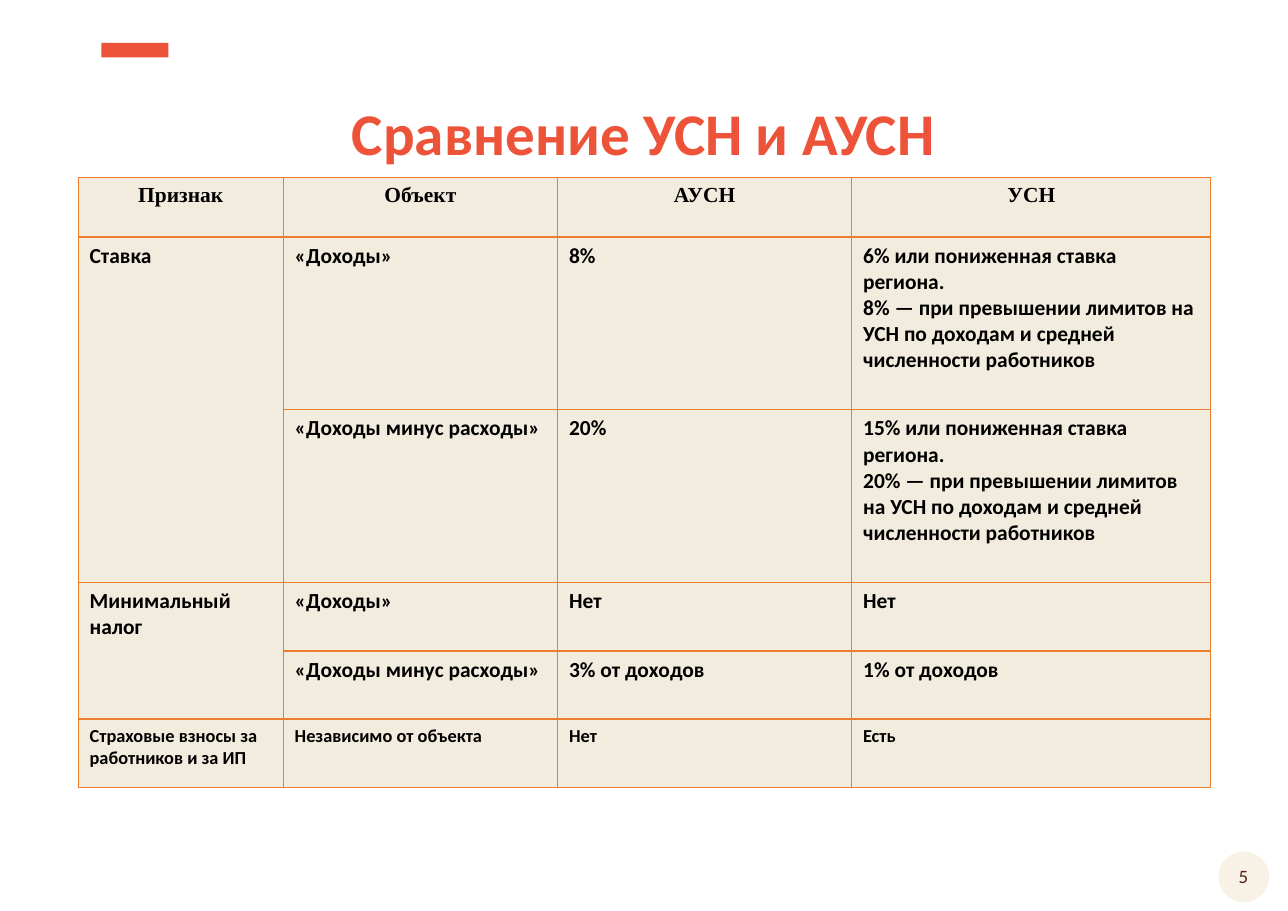
from dataclasses import dataclass

from pptx import Presentation
from pptx.dml.color import RGBColor as RGB
from pptx.enum.shapes import MSO_SHAPE as Shape
from pptx.enum.text import MSO_ANCHOR as Anchor, PP_ALIGN as Align
from pptx.oxml.ns import qn
from pptx.util import Pt
from lxml.etree import SubElement as Sub


@dataclass(frozen=True)
class Theme:
    accent: str = "ED5338"
    cream: str = "F7F2E5"
    cell: str = "F2ECDE"
    line: str = "ED7D31"
    ink: str = "000000"
    brown: str = "562212"
    sans: str = "Calibri"
    serif: str = "Times New Roman"
    title: float = 38.6
    body: float = 14
    small: float = 12
    page: float = 12.3


THEME = Theme()

COLS = [134, 179.3, 192.2, 234.7]
ROWS = [38.9, 113, 113, 44.6, 44.6, 44.6]
DATA = [
    ["Признак", "Объект", "АУСН", "УСН"],
    ["Ставка", "«Доходы»", "8%",
     "6% или пониженная ставка региона.\v8% — при превышении лимитов на "
     "УСН по доходам и средней численности работников"],
    ["", "«Доходы минус расходы»", "20%",
     "15% или пониженная ставка региона.\v20% — при превышении лимитов на "
     "УСН по доходам и средней численности работников"],
    ["Минимальный налог", "«Доходы»", "Нет", "Нет"],
    ["", "«Доходы минус расходы»", "3% от доходов", "1% от доходов"],
    ["Страховые взносы за работников и за ИП", "Независимо от объекта",
     "Нет", "Есть"],
]


def style(para, size, color, face=THEME.sans, bold=False, align=Align.LEFT):
    para.alignment = align
    font = para.font
    font.size, font.name, font.bold = Pt(size), face, bold
    font.color.rgb = RGB.from_string(color)


def add_block(slide, kind, box, color):
    block = slide.shapes.add_shape(kind, *map(Pt, box))
    block.shadow.inherit = False
    block.fill.solid()
    block.fill.fore_color.rgb = RGB.from_string(color)
    block.line.fill.background()


def add_label(slide, box, text, size, color, bold=False):
    frame = slide.shapes.add_textbox(*map(Pt, box)).text_frame
    frame.word_wrap = True
    frame.vertical_anchor = Anchor.MIDDLE
    frame.text = text
    para = frame.paragraphs[0]
    style(para, size, color, bold=bold, align=Align.CENTER)
    return para


def add_edge(cell, side, width):
    # Borders must come before the fill in the cell properties
    edge = Sub(cell._tc.get_or_add_tcPr(), qn(f"a:{side}"), w=str(Pt(width)))
    fill = Sub(edge, qn("a:solidFill"))
    Sub(fill, qn("a:srgbClr"), val=THEME.line)


def fill_cell(cell, text, row):
    head, last = row == 0, row == len(DATA) - 1
    cell.margin_left = cell.margin_right = Pt(7.5)
    cell.margin_top = cell.margin_bottom = Pt(3.75)
    widths = {"lnL": 1, "lnR": 1, "lnT": 2 if row == 1 else 1,
              "lnB": 2 if head else 1}
    for side, width in widths.items():
        add_edge(cell, side, width)
    cell.fill.solid()
    cell.fill.fore_color.rgb = RGB.from_string(THEME.cell)
    cell.text = text
    style(cell.text_frame.paragraphs[0],
          THEME.small if last else THEME.body, THEME.ink,
          THEME.serif if head else THEME.sans, True,
          Align.CENTER if head else Align.LEFT)


def add_grid(slide, left, top):
    box = map(Pt, (left, top, sum(COLS), sum(ROWS)))
    table = slide.shapes.add_table(len(ROWS), len(COLS), *box).table
    table.first_row = table.horz_banding = False
    for col, width in zip(table.columns, COLS):
        col.width = Pt(width)
    for row, height in zip(table.rows, ROWS):
        row.height = Pt(height)
    for r, texts in enumerate(DATA):
        for c, text in enumerate(texts):
            fill_cell(table.cell(r, c), text, r)
    # An empty first cell joins the one above
    for r, texts in enumerate(DATA):
        if not texts[0]:
            table.cell(r - 1, 0).merge(table.cell(r, 0))


def main():
    deck = Presentation()
    deck.slide_width, deck.slide_height = Pt(841.68), Pt(595.44)
    slide = deck.slides.add_slide(deck.slide_layouts[6])

    # Page number
    add_block(slide, Shape.OVAL, (796.3, 556.6, 33.1, 33.1), THEME.cream)
    add_label(slide, (794.2, 561.6, 36.7, 22.3), "5", THEME.page, THEME.brown)

    # Accent bar and title
    add_block(slide, Shape.RECTANGLE, (66.2, 28.1, 43.9, 9.4), THEME.accent)
    title = add_label(slide, (57.6, 31.7, 725.8, 115.2),
                      "Сравнение УСН и АУСН", THEME.title, THEME.accent, True)
    title.line_spacing = 0.9

    # Comparison table
    add_grid(slide, 51.1, 116)

    deck.save("out.pptx")


if __name__ == "__main__":
    main()
